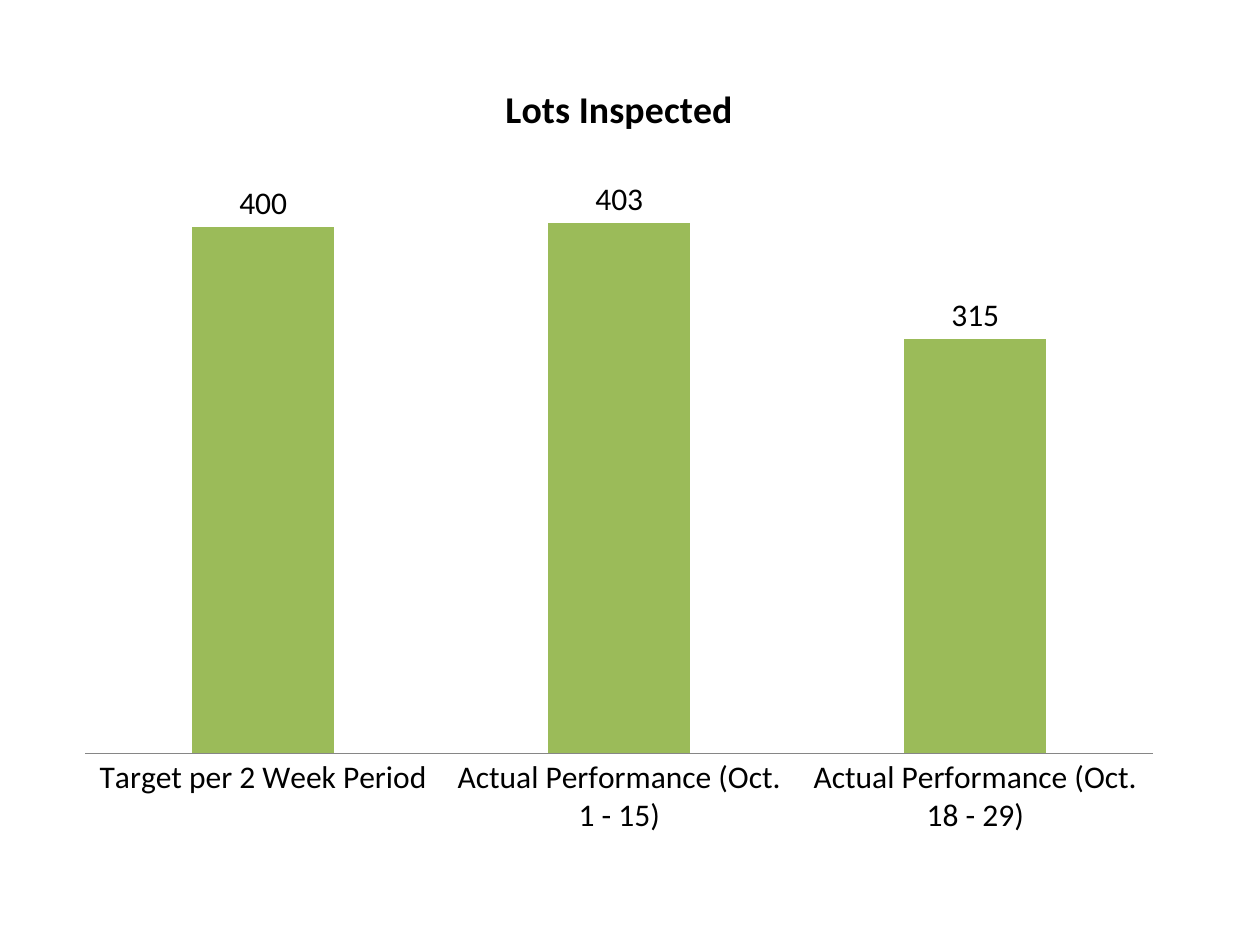
from pptx import Presentation
from pptx import util as u
from pptx.chart import data
from pptx.dml import color
from pptx.enum import chart as kinds


def paint(target, shade):
    target.solid()
    target.fore_color.rgb = color.RGBColor.from_string(shade)


def style(font, size=18, bold=False, shade="000000"):
    font.name = "Calibri"
    font.size = u.Pt(size)
    font.bold = bold
    paint(font.fill, shade)


def write(frame, words, **looks):
    span = frame.paragraphs[0].add_run()
    span.text = words
    style(span.font, **looks)


def add_lots_chart(page, left, top, width, height):
    lots = data.CategoryChartData(number_format="0")
    lots.categories = [
        "Target per 2 Week Period",
        "Actual Performance (Oct. 1 - 15)",
        "Actual Performance (Oct. 18 - 29)",
    ]
    lots.add_series("Lots Inspected", (400, 403, 315))
    chart = page.shapes.add_chart(
        kinds.XL_CHART_TYPE.COLUMN_CLUSTERED, left, top, width, height, lots
    ).chart
    style(chart.font)
    chart.has_legend = False
    chart.has_title = True
    write(chart.chart_title.text_frame, "Lots Inspected", size=21.6, bold=True)

    plot = chart.plots[0]
    plot.vary_by_categories = False
    plot.gap_width = 150
    plot.overlap = -25
    paint(plot.series[0].format.fill, "9BBB59")
    plot.has_data_labels = True
    labels = plot.data_labels
    labels.show_value = True
    labels.number_format = "0"
    labels.number_format_is_linked = False
    labels.position = kinds.XL_LABEL_POSITION.OUTSIDE_END
    style(labels.font)

    names = chart.category_axis
    names.major_tick_mark = kinds.XL_TICK_MARK.NONE
    paint(names.format.line.fill, "868686")
    names.format.line.width = u.Pt(0.75)
    style(names.tick_labels.font)

    values = chart.value_axis
    values.visible = False
    values.has_major_gridlines = False
    values.minimum_scale = 0
    values.maximum_scale = 450


def main():
    deck = Presentation()
    deck.slide_width = u.Inches(10)
    deck.slide_height = u.Inches(7.5)
    page = deck.slides.add_slide(deck.slide_layouts[6])
    paint(page.background.fill, "FFFFFF")
    add_lots_chart(page, u.Inches(0.5), u.Inches(0.42), u.Inches(8.83), u.Inches(6.33))
    deck.save("out.pptx")


if __name__ == "__main__":
    main()
